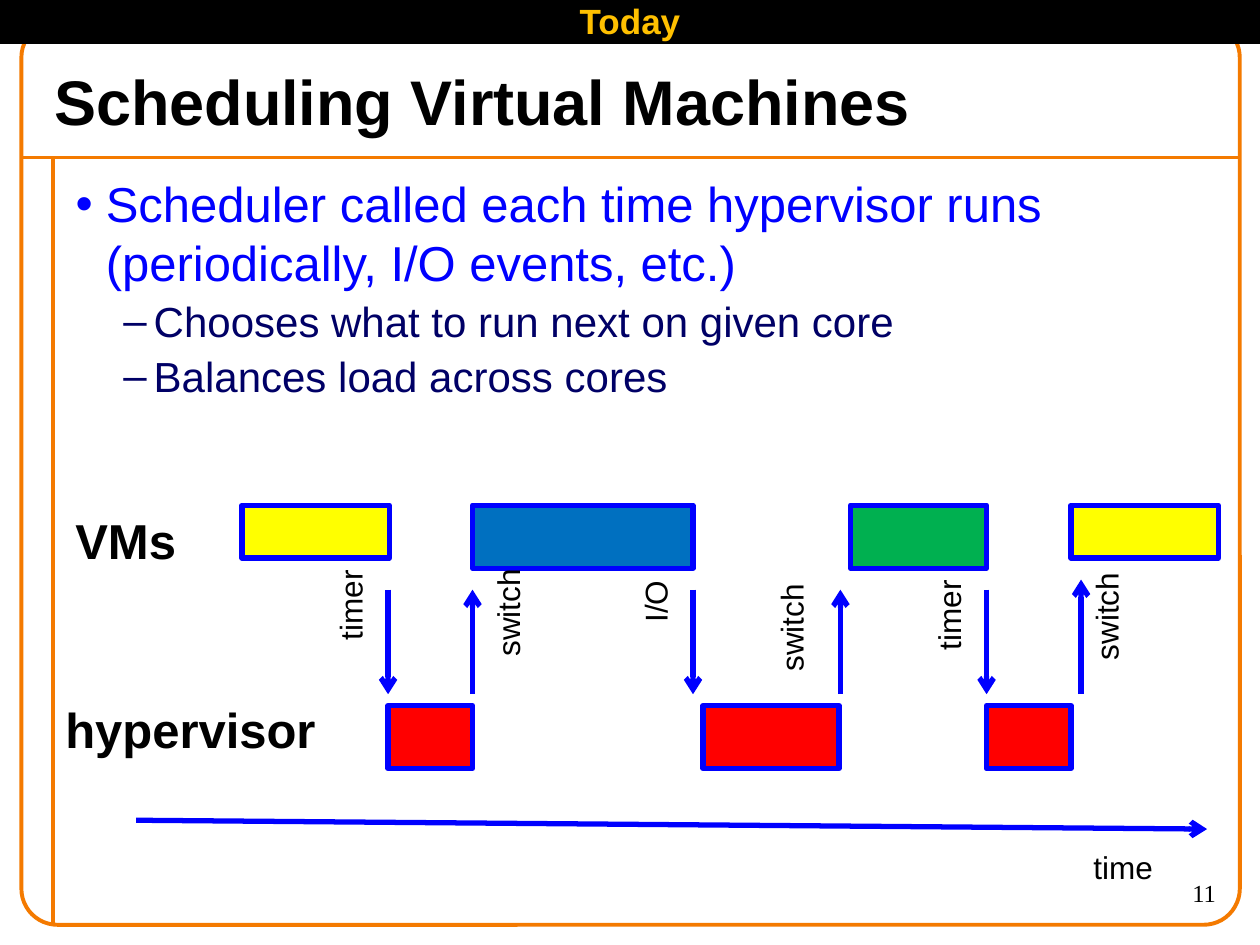
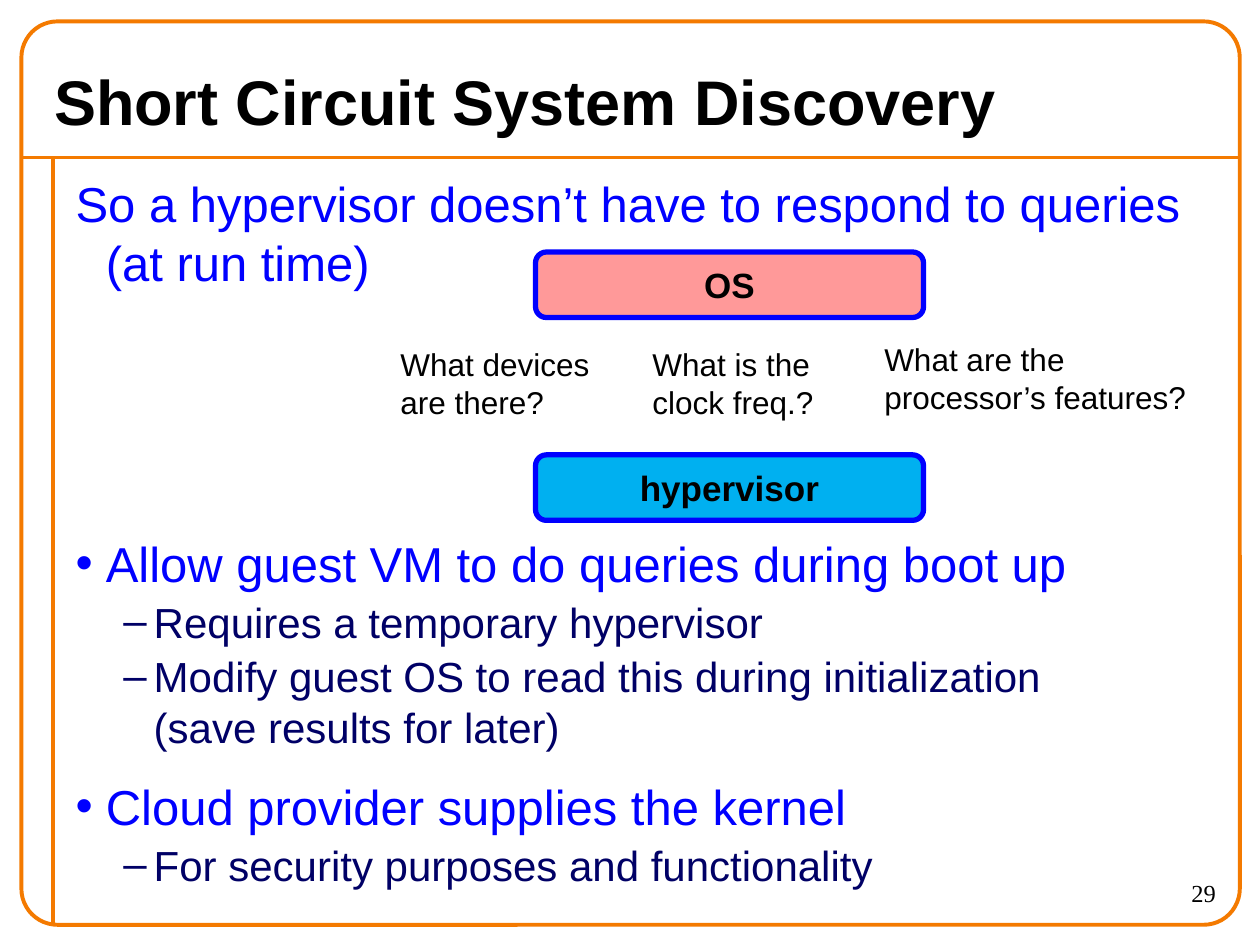
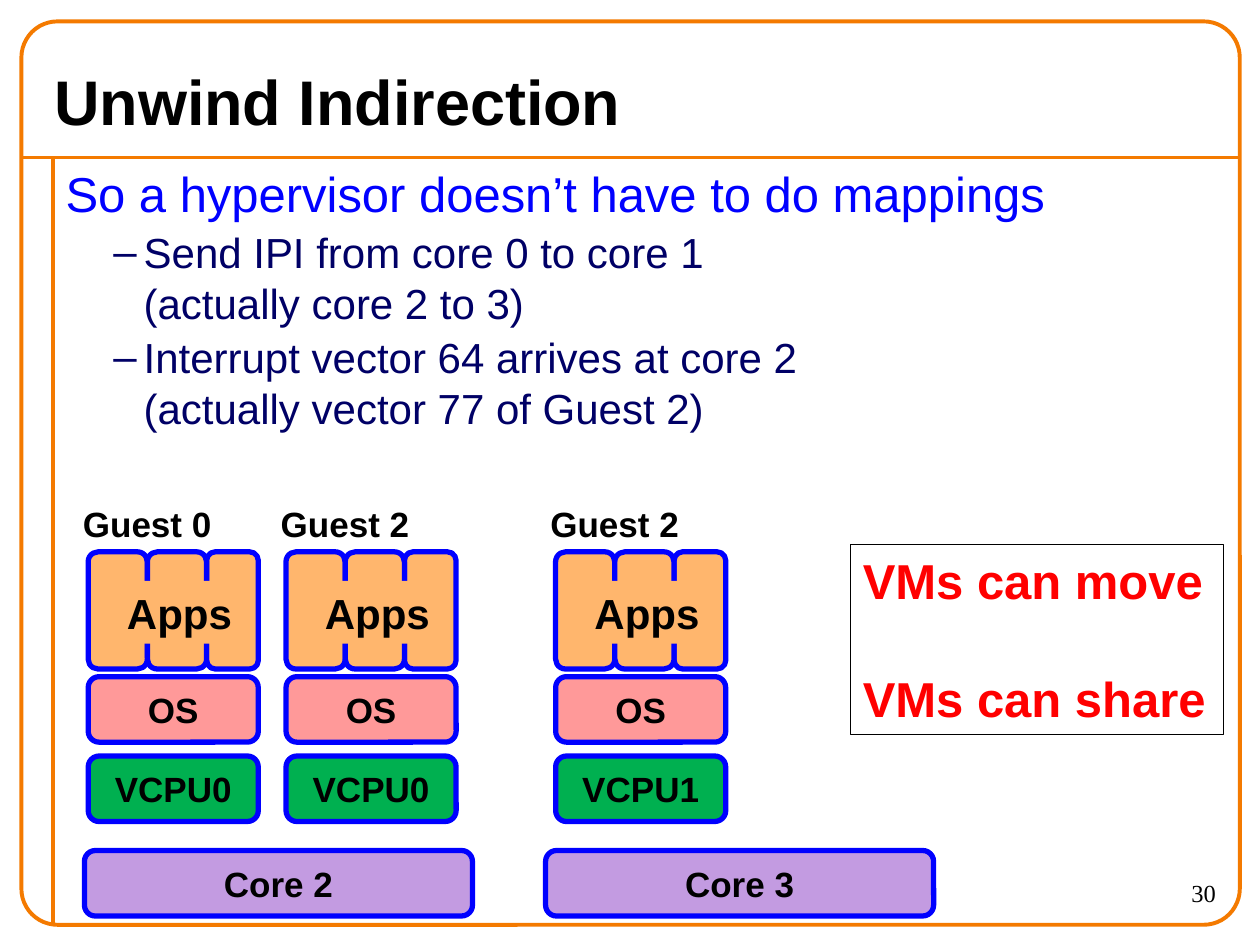
"""Build three slides on scheduling and optimising virtual machines."""
from lxml import etree
from pptx import Presentation
from pptx.dml.color import RGBColor
from pptx.enum.shapes import MSO_CONNECTOR, MSO_SHAPE
from pptx.enum.text import MSO_ANCHOR, MSO_AUTO_SIZE, PP_ALIGN
from pptx.oxml.ns import qn
from pptx.util import Inches, Pt

STRAIGHT = MSO_CONNECTOR.STRAIGHT
RECT, ROUND = MSO_SHAPE.RECTANGLE, MSO_SHAPE.ROUNDED_RECTANGLE
TOP, MIDDLE = MSO_ANCHOR.TOP, MSO_ANCHOR.MIDDLE
FIXED, GROW = MSO_AUTO_SIZE.NONE, MSO_AUTO_SIZE.SHAPE_TO_FIT_TEXT
LEFT, CENTER, RIGHT = PP_ALIGN.LEFT, PP_ALIGN.CENTER, PP_ALIGN.RIGHT

ORANGE, BLUE, NAVY, BLACK, WHITE = "F47A00", "0000FF", "000066", "000000", "FFFFFF"
RED, YELLOW, GREEN, GOLD = "FF0000", "FFFF00", "00B050", "FFC000"
OCEAN, SKY, PINK, PEACH, LILAC = "0070C0", "00B0F0", "FF9999", "FFB66D", "C39BE1"

BODY_AT = (0.5, 1.33, 9.25, 6)
# Body levels: size, colour, left margin, space before
LEVELS = [(28, BLUE, 0.24, 14), (24, NAVY, 0.62, 2.4)]
HANGING = 0.24

# Body lines: level, bulleted, text, optional space before
SCHEDULING = [
    (0, True, "Scheduler called each time hypervisor runs\n(periodically, I/O events, etc.)"),
    (1, True, "Chooses what to run next on given core"),
    (1, True, "Balances load across cores"),
]
DISCOVERY = [
    (0, False, "So a hypervisor doesn’t have to respond to queries (at run time)"),
    (0, True, "Allow guest VM to do queries during boot up", 138),
    (1, True, "Requires a temporary hypervisor"),
    (1, True, "Modify guest OS to read this during initialization\n(save results for later)"),
    (0, True, "Cloud provider supplies the kernel"),
    (1, True, "For security purposes and functionality"),
]
INDIRECTION = [
    (0, False, "So a hypervisor doesn’t have to do mappings"),
    (1, True, "Send IPI from core 0 to core 1\n(actually core 2 to 3)"),
    (1, True, "Interrupt vector 64 arrives at core 2\n(actually vector 77 of Guest 2)"),
]

# Time slices: left, width, height, fill
VM_TOP, HYPERVISOR_TOP = 4.01, 5.6
VM_SLICES = [(1.92, 1.17, 0.42, YELLOW), (3.75, 1.75, 0.5, OCEAN),
             (6.75, 1.08, 0.5, GREEN), (8.5, 1.17, 0.42, YELLOW)]
HYPERVISOR_SLICES = [(3.08, 0.67), (5.58, 1.08), (7.83, 0.67)]
# Events: arrow x, arrow top, enters hypervisor, label, label left, top, height
EVENTS = [
    (3.08, 4.68, True, "timer", 2.58, 4.52, 0.66),
    (3.75, 4.68, False, "switch", 3.83, 4.51, 0.8),
    (5.5, 4.68, True, "I/O", 5, 4.6, 0.44),
    (6.67, 4.68, False, "switch", 6.08, 4.63, 0.8),
    (7.83, 4.68, True, "timer", 7.33, 4.6, 0.66),
    (8.58, 4.6, False, "switch", 8.58, 4.54, 0.8),
]
EVENT_BOTTOM = 5.51

LAYERS = [("OS", 2, PINK), ("hypervisor", 3.61, SKY)]
QUERIES = [("What devices are there?", 3.08, 2.69, 1.75),
           ("What are the processor’s features?", 6.92, 2.65, 2.67),
           ("What is the clock freq.?", 5.08, 2.69, 1.67)]

GUESTS = [("Guest 2", "VCPU1", 4.41), ("Guest 0", "VCPU0", 0.7), ("Guest 2", "VCPU0", 2.27)]
APP_PARTS = [(0, 0.47), (0.94, 0.41), (0.47, 0.47)]
CORES = [("Core 3", 4.33), ("Core 2", 0.67)]


def color(value):
    """Turn a hex string into a colour."""
    return RGBColor.from_string(value)


def lengths(values):
    """Turn numbers into inch lengths."""
    return [Inches(value) for value in values]


def style(para, size, ink=BLACK, bold=False, align=LEFT, font="Arial"):
    """Format one paragraph."""
    para.alignment = align
    para.font.name, para.font.size, para.font.bold = font, Pt(size), bold
    para.font.color.rgb = color(ink)


def write(shape, text, size, ink=BLACK, bold=False, align=LEFT, font="Arial",
          wrap=False, fit=GROW, anchor=TOP):
    """Put one paragraph of text in a shape."""
    frame = shape.text_frame
    frame.word_wrap, frame.auto_size, frame.vertical_anchor = wrap, fit, anchor
    frame.text = text
    style(frame.paragraphs[0], size, ink, bold, align, font)
    return frame


def add_label(slide, text, at, size, **options):
    """Add a text box."""
    return write(slide.shapes.add_textbox(*lengths(at)), text, size, **options)


def add_box(slide, kind, at, fill=None, line=BLUE, weight=3):
    """Add a preset shape; leave out fill or line when None."""
    box = slide.shapes.add_shape(kind, *lengths(at))
    box.shadow.inherit = False
    if fill:
        box.fill.solid()
        box.fill.fore_color.rgb = color(fill)
    else:
        box.fill.background()
    if line:
        box.line.color.rgb = color(line)
        box.line.width = Pt(weight)
    else:
        box.line.fill.background()
    return box


def add_named_box(slide, kind, at, fill, text, ink=BLACK, line=BLUE):
    """Add a shape with a centred bold name."""
    box = add_box(slide, kind, at, fill, line)
    write(box, text, 20, ink, True, CENTER, fit=FIXED, anchor=MIDDLE)


def add_line(slide, start, end, ink=BLUE, weight=3, arrow=True):
    """Add a straight line, with an arrowhead at its end if asked."""
    line = slide.shapes.add_connector(STRAIGHT, *lengths(start + end))
    line.line.color.rgb = color(ink)
    line.line.width = Pt(weight)
    properties = line.element.spPr
    if arrow:
        etree.SubElement(properties.find(qn("a:ln")), qn("a:tailEnd"), type="arrow")
    etree.SubElement(properties, qn("a:effectLst"))


def fill_body(body, lines, at):
    """Place the body and write its outline."""
    body.left, body.top, body.width, body.height = lengths(at)
    frame = body.text_frame
    frame.auto_size, frame.vertical_anchor = FIXED, TOP
    for index, (level, bulleted, text, *gap) in enumerate(lines):
        para = frame.add_paragraph() if index else frame.paragraphs[0]
        size, ink, margin, before = LEVELS[level]
        para.text, para.level = text, level
        para.space_before = Pt(gap[0] if gap else before)
        properties = para._p.get_or_add_pPr()
        properties.set("marL", str(Inches(margin)))
        properties.set("indent", str(-Inches(HANGING)))
        if not bulleted:
            etree.SubElement(properties, qn("a:buNone"))
        style(para, size, ink)


def add_page(deck, title, lines, number, body_at=BODY_AT):
    """Add a slide with the shared frame, title, body and number."""
    slide = deck.slides.add_slide(deck.slide_layouts[1])
    add_line(slide, (0.17, 1.25), (9.83, 1.25), ORANGE, 2.25, False)
    add_line(slide, (0.42, 1.25), (0.42, 7.33), ORANGE, 2.25, False)
    border = add_box(slide, ROUND, (0.17, 0.17, 9.67, 7.17), None, ORANGE, 2.25)
    border.adjustments[0] = 0.04
    heading = slide.shapes.title
    heading.left, heading.top, heading.width, heading.height = lengths((0.33, 0.42, 8.82, 0.75))
    write(heading, title, 36, bold=True, wrap=True, fit=FIXED, anchor=MIDDLE)
    fill_body(slide.placeholders[1], lines, body_at)
    add_label(slide, str(number), (8.75, 6.92, 1, 0.42), 14, align=RIGHT,
              font="Times New Roman", wrap=True, fit=FIXED)
    return slide


def draw_timeline(slide):
    """Draw the VM and hypervisor slices over time."""
    for left, width, height, fill in VM_SLICES:
        add_box(slide, RECT, (left, VM_TOP, width, height), fill)
    for left, width in HYPERVISOR_SLICES:
        add_box(slide, RECT, (left, HYPERVISOR_TOP, width, 0.5), RED)
    for x, top, entering, text, left, label_top, height in EVENTS:
        ends = [(x, top), (x, EVENT_BOTTOM)]
        add_line(slide, *(ends if entering else ends[::-1]))
        frame = add_label(slide, text, (left, label_top, 0.5, height), 18)
        frame._txBody.bodyPr.set("vert", "vert270")
    add_label(slide, "VMs", (0.5, 4, 1.01, 0.57), 28, bold=True)
    add_label(slide, "hypervisor", (0.42, 5.5, 2.21, 0.57), 28, bold=True)
    add_line(slide, (1.08, 6.51), (9.58, 6.58))
    add_label(slide, "time", (8.58, 6.68, 0.68, 0.4), 18)
    add_named_box(slide, RECT, (0, 0, 10, 0.33), BLACK, "Today", GOLD, BLACK)


def draw_queries(slide):
    """Draw the questions between OS and hypervisor."""
    for text, top, fill in LAYERS:
        add_named_box(slide, ROUND, (4.25, top, 3.08, 0.52), fill, text)
    for text, left, top, width in QUERIES:
        add_label(slide, text, (left, top, width, 0.71), 18, wrap=True)


def draw_guests(slide):
    """Draw the guest stacks, the cores and the conclusion."""
    for guest, processor, left in GUESTS:
        add_named_box(slide, ROUND, (left, 5.37, 1.35, 0.52), PINK, "OS")
        for offset, width in APP_PARTS:
            add_box(slide, ROUND, (left + offset, 4.38, width, 0.93), PEACH)
        apps = add_box(slide, RECT, (left + 0.21, 4.61, 1.04, 0.5), PEACH, None)
        write(apps, "Apps", 24, bold=True, wrap=True)
        add_label(slide, guest, (left - 0.14, 3.94, 1.23, 0.44), 20, bold=True)
        add_named_box(slide, ROUND, (left, 6, 1.35, 0.52), GREEN, processor)
    for core, left in CORES:
        add_named_box(slide, ROUND, (left, 6.75, 3.08, 0.52), LILAC, core)
    note = add_box(slide, RECT, (6.75, 4.32, 2.96, 1.51), WHITE, BLACK, 0.75)
    frame = write(note, "VMs can move", 28, RED, True)
    para = frame.add_paragraph()
    para.text, para.space_before = "VMs can share", Pt(34)
    style(para, 28, RED, True)


def main():
    """Build and save the deck."""
    deck = Presentation()
    deck.slide_width, deck.slide_height = lengths((10, 7.5))
    draw_timeline(add_page(deck, "Scheduling Virtual Machines", SCHEDULING, 11))
    draw_queries(add_page(deck, "Short Circuit System Discovery", DISCOVERY, 29))
    draw_guests(add_page(deck, "Unwind Indirection", INDIRECTION, 30, (0.42, 1.25, 9.25, 2.42)))
    deck.save("out.pptx")


if __name__ == "__main__":
    main()
